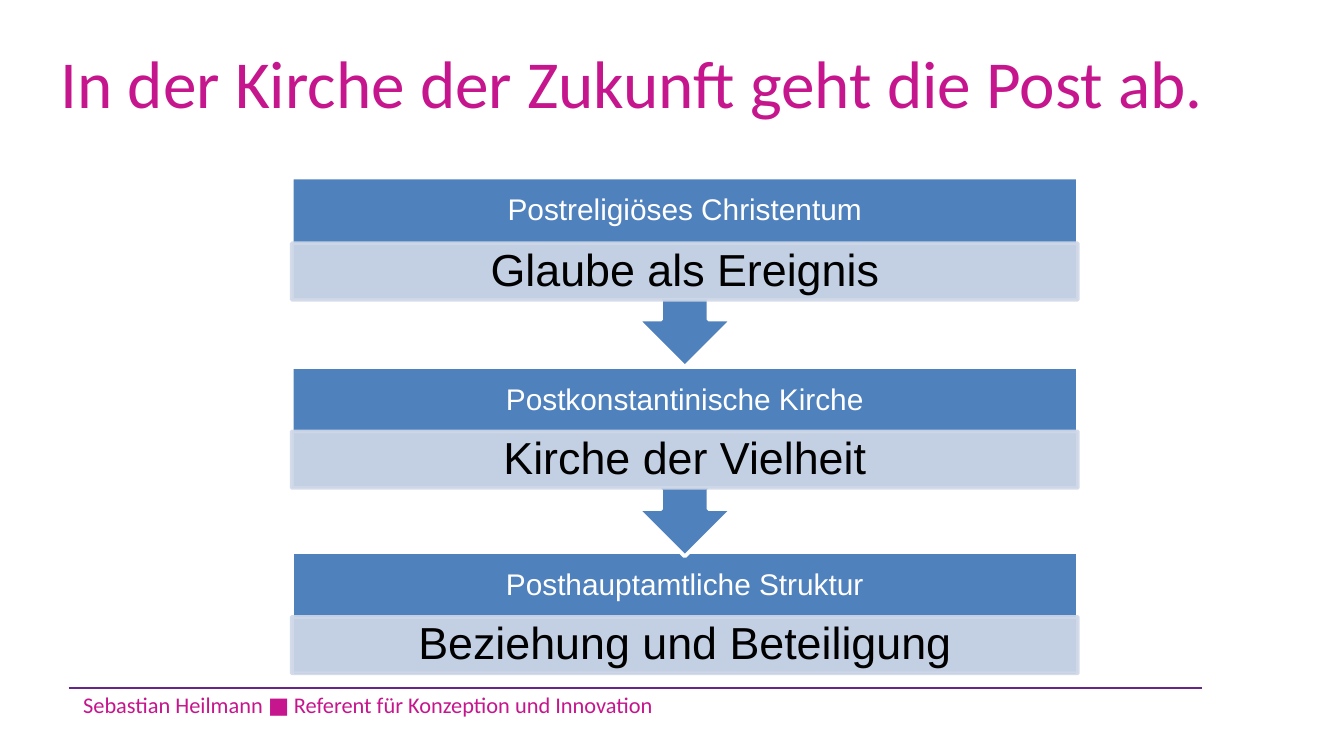
from lxml.etree import SubElement
from pptx import Presentation
from pptx.dml.color import RGBColor
from pptx.enum.shapes import MSO_CONNECTOR as LINE, MSO_SHAPE as SHAPE
from pptx.enum.text import MSO_ANCHOR as ANCHOR, PP_ALIGN as ALIGN
from pptx.oxml.ns import qn
from pptx.util import Inches, Pt

PINK = RGBColor(0xC6, 0x16, 0x8D)
PURPLE = RGBColor(0x67, 0x26, 0x86)
BLUE = RGBColor(0x4F, 0x81, 0xBD)
PALE = RGBColor(0xD0, 0xD8, 0xE8)
WHITE = RGBColor(0xFF, 0xFF, 0xFF)
BLACK = RGBColor(0, 0, 0)

# One column of steps: left edge and width, then the heights inside a step
LEFT, WIDTH = 2.17, 5.85
HEAD, BAND = 0.5, 0.42
CALLOUT, BOX = 1.41, 0.92

# Top of the step, top of its band, head and answer
STEPS = [
    (1.32, 1.81, "Postreligiöses Christentum", "Glaube als Ereignis"),
    (2.73, 3.21, "Postkonstantinische Kirche", "Kirche der Vielheit"),
    (4.11, 4.59, "Posthauptamtliche Struktur", "Beziehung und Beteiligung"),
]


def write(shape, text, size, font, color, align=ALIGN.LEFT, pad=(0.1, 0.05)):
    frame = shape.text_frame
    frame.text = text
    frame.word_wrap = True
    frame.vertical_anchor = ANCHOR.MIDDLE
    frame.margin_left = frame.margin_right = Inches(pad[0])
    frame.margin_top = frame.margin_bottom = Inches(pad[1])
    para = frame.paragraphs[0]
    para.alignment = align
    face = para.runs[0].font
    face.size, face.name = Pt(size), font
    face.color.rgb = color
    return para


def add_text(slide, place, *style, **more):
    box = slide.shapes.add_textbox(*map(Inches, place))
    return write(box, *style, **more)


def add_block(slide, kind, top, height, fill, line):
    block = slide.shapes.add_shape(
        kind, *map(Inches, (LEFT, top, WIDTH, height)))
    block.shadow.inherit = False
    block.fill.solid()
    block.fill.fore_color.rgb = fill
    block.line.color.rgb = line
    block.line.width = Pt(2)
    return block


def fade(shape, share):
    for color in shape._element.spPr.iter(qn("a:srgbClr")):
        SubElement(color, qn("a:alpha"), val=str(share * 1000))


def add_step(slide, top, low, head, body, last):
    # Blue body, with a downward arrow unless it ends the chain
    if last:
        add_block(slide, SHAPE.RECTANGLE, top, BOX, BLUE, WHITE)
    else:
        arrow = add_block(slide, SHAPE.UP_ARROW_CALLOUT, top, CALLOUT,
                          BLUE, WHITE)
        arrow.rotation = 180
    para = add_text(slide, (LEFT, top, WIDTH, HEAD), head, 16, "Arial",
                    WHITE, align=ALIGN.CENTER, pad=(0.12, 0.12))
    para.line_spacing = 0.9

    # Pale band with the answer
    band = add_block(slide, SHAPE.RECTANGLE, low, BAND, PALE, PALE)
    fade(band, 90)
    para = write(band, body, 24, "Arial", BLACK, ALIGN.CENTER, (0.19, 0.03))
    para.line_spacing = 0.9


def add_title(slide, text):
    title = slide.shapes.title
    title.left, title.top, title.width, title.height = map(
        Inches, (0.35, 0.14, 9, 0.94))
    write(title, text, 36, "Calibri", PINK)


def add_footer(slide, text):
    add_text(slide, (0.52, 5.08, 5.11, 0.33), text, 12, "Calibri", PINK)
    rule = slide.shapes.add_connector(
        LINE.STRAIGHT, *map(Inches, (0.51, 5.12, 8.94, 5.12)))
    rule.line.color.rgb = PURPLE
    rule.line.width = Pt(1)
    SubElement(rule._element.spPr, qn("a:effectLst"))


def main():
    # Widescreen, 16 to 9
    deck = Presentation()
    deck.slide_width = Inches(10)
    deck.slide_height = deck.slide_width * 9 // 16
    slide = deck.slides.add_slide(deck.slide_layouts[5])

    add_footer(slide,
               "Sebastian Heilmann ■ Referent für Konzeption und Innovation")
    add_title(slide, "In der Kirche der Zukunft geht die Post ab.")

    # Lowest step first, so that each arrow tip lies on top of the next step
    for step in reversed(STEPS):
        add_step(slide, *step, last=step is STEPS[-1])

    deck.save("out.pptx")


if __name__ == "__main__":
    main()
